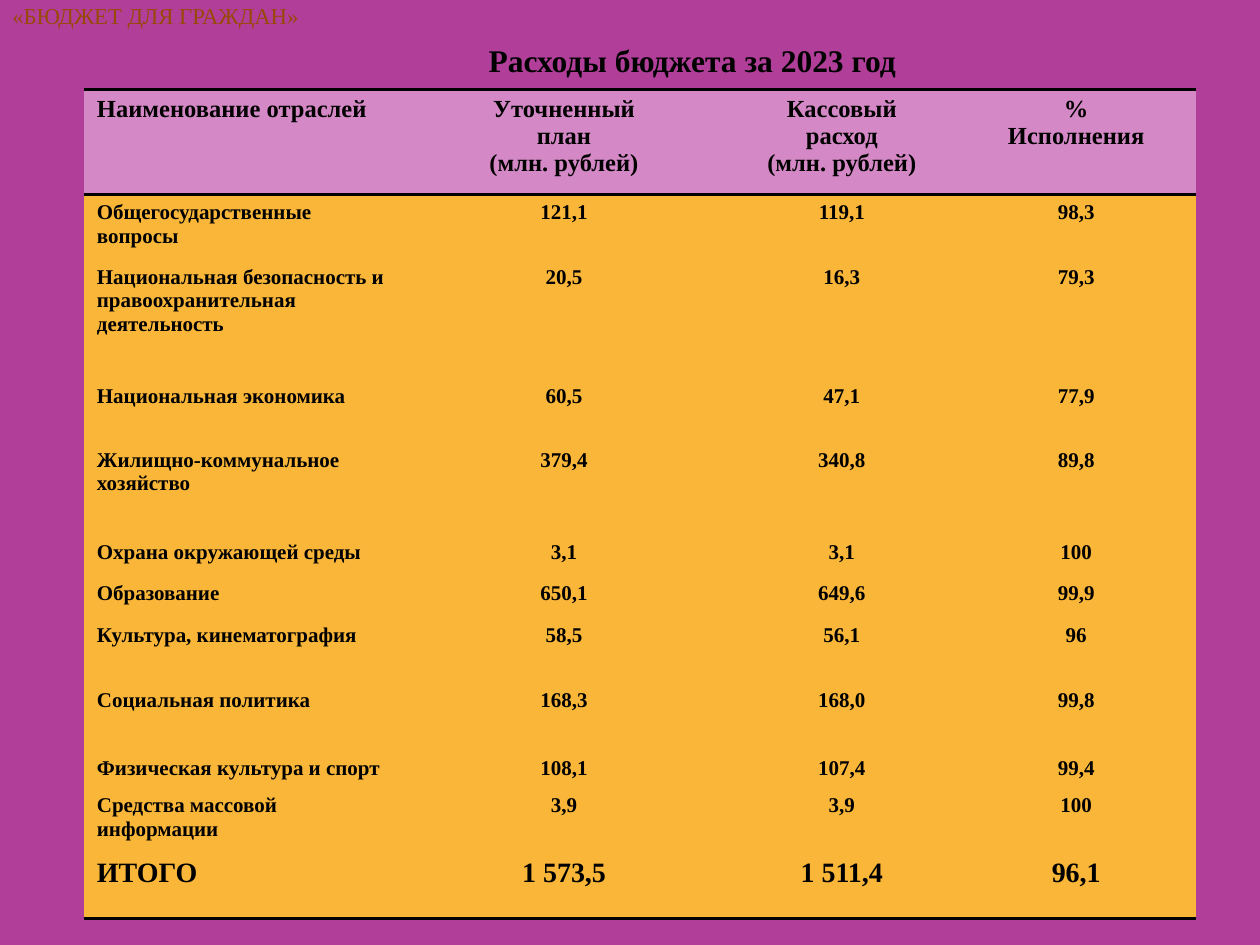
from lxml import etree
from pptx import Presentation
from pptx.dml.color import RGBColor
from pptx.enum import text as t
from pptx.oxml import ns
from pptx.util import Cm, Pt

FONT = "Times New Roman"
BLACK = "000000"
NO_GRID_STYLE = "{2D5ABB26-0587-4C30-8999-92F81FD0307C}"
COLUMN_WIDTHS = [6.38, 6.58, 4.62, 4.83]
HEADINGS = [
    "Наименование отраслей",
    "Уточненный\nплан\n(млн. рублей)",
    "Кассовый\nрасход\n(млн. рублей)",
    "%\nИсполнения",
]
EXPENSES = [
    (1.3, "Общегосударственные вопросы", "121,1", "119,1", "98,3"),
    (2.39, "Национальная безопасность и правоохранительная деятельность", "20,5", "16,3", "79,3"),
    (1.3, "Национальная экономика", "60,5", "47,1", "77,9"),
    (1.85, "Жилищно-коммунальное хозяйство", "379,4", "340,8", "89,8"),
    (0.84, "Охрана окружающей среды", "3,1", "3,1", "100"),
    (0.84, "Образование", "650,1", "649,6", "99,9"),
    (1.3, "Культура, кинематография", "58,5", "56,1", "96"),
    (1.37, "Социальная политика", "168,3", "168,0", "99,8"),
    (0.75, "Физическая культура и спорт", "108,1", "107,4", "99,4"),
    (1.24, "Средства массовой информации", "3,9", "3,9", "100"),
]
TOTAL = ["ИТОГО", "1 573,5", "1 511,4", "96,1"]


def rgb(value):
    return RGBColor.from_string(value)


def write(frame, content, size, color=BLACK, bold=False, align=t.PP_ALIGN.LEFT):
    for index, line in enumerate(content.split("\n")):
        paragraph = frame.add_paragraph() if index else frame.paragraphs[0]
        paragraph.alignment = align
        run = paragraph.add_run()
        run.text = line
        run.font.name = FONT
        run.font.size = Pt(size)
        run.font.bold = bold
        run.font.color.rgb = rgb(color)


def add_label(slide, left, top, width, height, content, indent=0.25, **style):
    frame = slide.shapes.add_textbox(Cm(left), Cm(top), Cm(width), Cm(height)).text_frame
    frame.word_wrap = True
    frame.auto_size = t.MSO_AUTO_SIZE.SHAPE_TO_FIT_TEXT
    frame.margin_left = Cm(indent)
    write(frame, content, **style)


def add_border(cell, side):
    properties = cell._tc.get_or_add_tcPr()
    line = etree.SubElement(properties, ns.qn(f"a:{side}"), w=str(Pt(2)))
    fill = etree.SubElement(line, ns.qn("a:solidFill"))
    etree.SubElement(fill, ns.qn("a:srgbClr"), val=BLACK)


def fill_row(row, height, values, size, color, borders=()):
    row.height = Cm(height)
    for index, (cell, value) in enumerate(zip(row.cells, values)):
        for side in borders:
            add_border(cell, side)
        cell.fill.solid()
        cell.fill.fore_color.rgb = rgb(color)
        align = t.PP_ALIGN.CENTER if index else t.PP_ALIGN.LEFT
        write(cell.text_frame, value, size, bold=True, align=align)


def add_budget_table(slide, left, top, width, height):
    frame = slide.shapes.add_table(
        len(EXPENSES) + 2, len(HEADINGS), Cm(left), Cm(top), Cm(width), Cm(height))
    budget = frame.table
    budget.first_row = budget.horz_banding = False
    budget._tbl.tblPr.find(ns.qn("a:tableStyleId")).text = NO_GRID_STYLE
    for column, column_width in zip(budget.columns, COLUMN_WIDTHS):
        column.width = Cm(column_width)
    rows = list(budget.rows)
    fill_row(rows[0], 2.13, HEADINGS, 14, "D488C5", ("lnT", "lnB"))
    for row, (row_height, *values) in zip(rows[1:-1], EXPENSES):
        fill_row(row, row_height, values, 12, "F9B639")
    fill_row(rows[-1], 1.37, TOTAL, 16, "F9B639", ("lnB",))


def main():
    deck = Presentation()
    deck.slide_width, deck.slide_height = Cm(25.4), Cm(19.05)
    slide = deck.slides.add_slide(deck.slide_layouts[6])
    slide.background.fill.solid()
    slide.background.fill.fore_color.rgb = rgb("B13F9A")
    add_label(slide, 0, -0.08, 7.7, 0.81, "«БЮДЖЕТ ДЛЯ ГРАЖДАН»", size=13, color="984807")
    add_budget_table(slide, 1.7, 1.8, sum(COLUMN_WIDTHS), 16.68)
    add_label(slide, 7.7, 0.71, 10.9, 1.02, "Расходы бюджета за 2023 год",
              indent=2.15, size=18, bold=True)
    deck.save("out.pptx")


if __name__ == "__main__":
    main()
